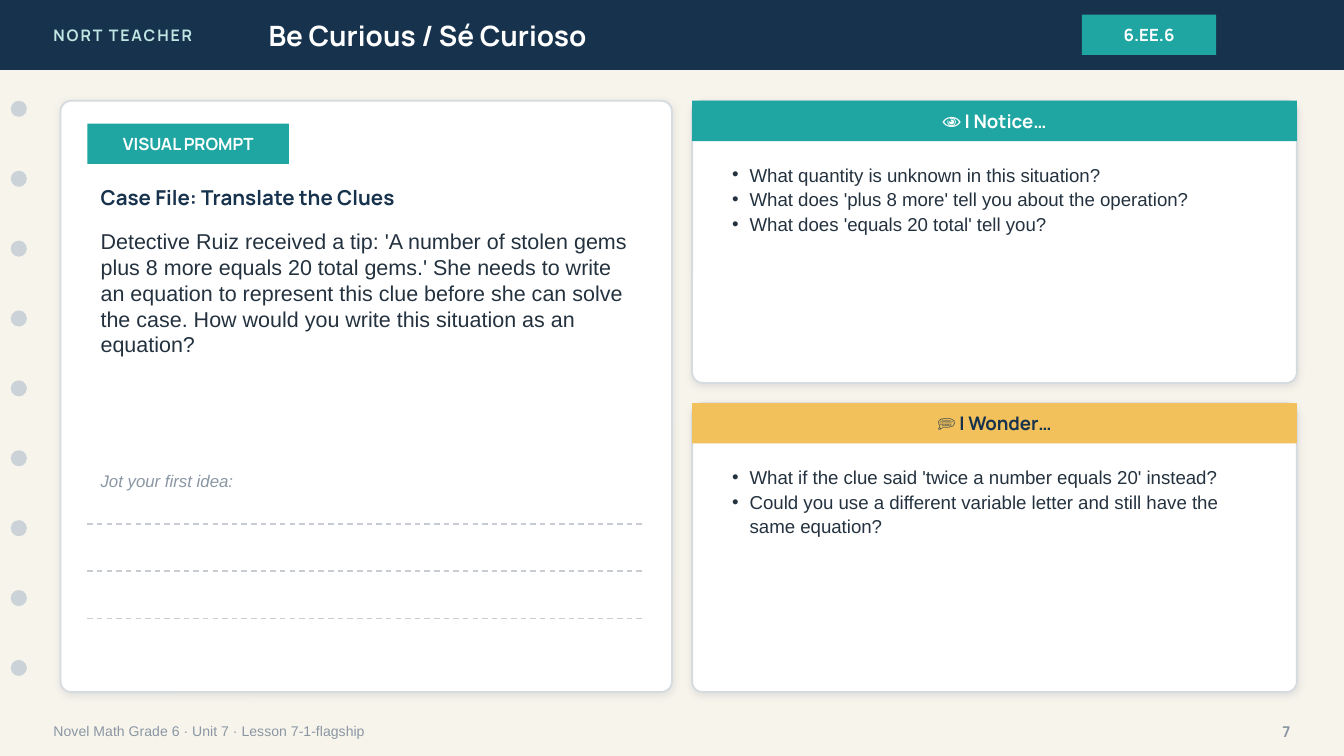
from lxml.etree import SubElement
from pptx import Presentation
from pptx.dml.color import RGBColor
from pptx.enum.dml import MSO_LINE
from pptx.enum.shapes import MSO_CONNECTOR, MSO_SHAPE
from pptx.enum.text import MSO_ANCHOR, PP_ALIGN
from pptx.oxml.ns import qn
from pptx.util import Inches, Pt

CREAM = RGBColor(0xF7, 0xF4, 0xEC)
NAVY = RGBColor(0x17, 0x32, 0x4D)
TEAL = RGBColor(0x1F, 0xA6, 0xA2)
MINT = RGBColor(0xBF, 0xE6, 0xE2)
GOLD = RGBColor(0xF2, 0xC1, 0x5B)
WHITE = RGBColor(0xFF, 0xFF, 0xFF)
INK = RGBColor(0x24, 0x32, 0x3F)
GREY = RGBColor(0x8A, 0x96, 0xA3)
HOLE = RGBColor(0xCB, 0xD3, 0xD9)
BORDER = RGBColor(0xD6, 0xDB, 0xDF)
RULE = RGBColor(0xC7, 0xCD, 0xD2)

HEADING = {"name": "Manrope", "bold": True}
BODY = {"name": "Arial"}
MIDDLE, TOP = MSO_ANCHOR.MIDDLE, MSO_ANCHOR.TOP
LEFT, CENTER, RIGHT = PP_ALIGN.LEFT, PP_ALIGN.CENTER, PP_ALIGN.RIGHT


def add_block(kind, bounds, fill):
    block = page.shapes.add_shape(kind, *map(Inches, bounds))
    block.shadow.inherit = False
    block.fill.solid()
    block.fill.fore_color.rgb = fill
    block.line.fill.background()
    return block


def write(box, lines, size, color, style, align=LEFT, anchor=MIDDLE, bullets=False):
    """Fill a shape with one paragraph per line and return the last run."""
    frame = box.text_frame
    frame.word_wrap = True
    frame.vertical_anchor = anchor
    for index, line in enumerate(lines):
        para = frame.add_paragraph() if index else frame.paragraphs[0]
        para.alignment = align
        if bullets:
            para.line_spacing = 1.1
            properties = para._p.get_or_add_pPr()
            properties.set("marL", str(Inches(0.13)))
            properties.set("indent", str(-Inches(0.13)))
            SubElement(properties, qn("a:buFont"), typeface="Arial")
            SubElement(properties, qn("a:buChar"), char="•")
        span = para.add_run()
        span.text = line
        span.font.size = Pt(size)
        span.font.color.rgb = color
        for key, value in style.items():
            setattr(span.font, key, value)
    return span


deck = Presentation()
deck.slide_width = Inches(10)
deck.slide_height = deck.slide_width * 9 // 16
page = deck.slides.add_slide(deck.slide_layouts[6])
page.background.fill.solid()
page.background.fill.fore_color.rgb = CREAM

# Header band and binder holes
add_block(MSO_SHAPE.RECTANGLE, (0, 0, 10, 0.52), NAVY)
for row in range(9):
    add_block(MSO_SHAPE.OVAL, (0.08, 0.75 + 0.52 * row, 0.12, 0.12), HOLE)

# Cards: bounds and corner rounding
cards = [
    ((0.45, 0.75, 4.55, 4.4), 0.018),
    ((5.15, 0.75, 4.5, 2.1), 0.038),
    ((5.15, 3, 4.5, 2.15), 0.037),
]
for bounds, rounding in cards:
    card = add_block(MSO_SHAPE.ROUNDED_RECTANGLE, bounds, WHITE)
    card.adjustments[0] = rounding
    card.line.color.rgb = BORDER
    card.line.width = Pt(1)
    effects = card._element.spPr.find(qn("a:effectLst"))
    shadow = SubElement(effects, qn("a:outerShdw"), blurRad=str(Pt(4)),
                        dist=str(Pt(1)), dir="5400000", rotWithShape="0")
    tint = SubElement(shadow, qn("a:srgbClr"), val="1C2E42")
    SubElement(tint, qn("a:alpha"), val="10000")

# Filled labels
labels = [
    ((8.05, 0.11, 1, 0.3), "6.EE.6", 9, TEAL, WHITE),
    ((0.65, 0.92, 1.5, 0.3), "VISUAL PROMPT", 9, TEAL, WHITE),
    ((5.15, 0.75, 4.5, 0.3), "👁 I Notice…", 10, TEAL, WHITE),
    ((5.15, 3, 4.5, 0.3), "💭 I Wonder…", 10, GOLD, NAVY),
]
for bounds, text, size, fill, color in labels:
    label = add_block(MSO_SHAPE.RECTANGLE, bounds, fill)
    write(label, [text], size, color, HEADING, CENTER)

# Single-paragraph texts
prompt = (
    "Detective Ruiz received a tip: 'A number of stolen gems plus 8 more "
    "equals 20 total gems.' She needs to write an equation to represent this "
    "clue before she can solve the case. How would you write this situation "
    "as an equation?"
)
texts = [
    ((1.9, 0, 5.6, 0.52), "Be Curious / Sé Curioso", 15, WHITE, HEADING, LEFT, MIDDLE),
    ((0.3, 5.3, 7, 0.28), "Novel Math Grade 6 · Unit 7 · Lesson 7-1-flagship",
     7.5, GREY, BODY, LEFT, MIDDLE),
    ((9.2, 5.3, 0.5, 0.28), "7", 8, GREY, HEADING, RIGHT, MIDDLE),
    ((0.65, 1.32, 4.15, 0.3), "Case File: Translate the Clues", 11, NAVY, HEADING,
     LEFT, MIDDLE),
    ((0.65, 1.65, 4.15, 1.7), prompt, 11.5, INK, BODY, LEFT, TOP),
    ((0.65, 3.45, 4, 0.25), "Jot your first idea:", 9, GREY, BODY | {"italic": True},
     LEFT, MIDDLE),
]
for bounds, text, *formatting in texts:
    write(page.shapes.add_textbox(*map(Inches, bounds)), [text], *formatting)

brand = page.shapes.add_textbox(Inches(0.3), 0, Inches(2.4), Inches(0.52))
span = write(brand, ["NORT TEACHER"], 8.5, MINT, HEADING)
span._r.get_or_add_rPr().set("spc", "100")

# Question lists
questions = [
    ((5.35, 1.15, 4.1, 1.6), [
        "What quantity is unknown in this situation?",
        "What does 'plus 8 more' tell you about the operation?",
        "What does 'equals 20 total' tell you?",
    ]),
    ((5.35, 3.4, 4.1, 1.65), [
        "What if the clue said 'twice a number equals 20' instead?",
        "Could you use a different variable letter and still have the same equation?",
    ]),
]
for bounds, lines in questions:
    box = page.shapes.add_textbox(*map(Inches, bounds))
    write(box, lines, 10, INK, BODY, anchor=TOP, bullets=True)

# Dashed writing lines
for row in range(3):
    y = Inches(3.9 + 0.35 * row)
    rule = page.shapes.add_connector(MSO_CONNECTOR.STRAIGHT, Inches(0.65), y, Inches(4.8), y)
    rule.line.color.rgb = RULE
    rule.line.width = Pt(0.75)
    rule.line.dash_style = MSO_LINE.DASH
    SubElement(rule._element.spPr, qn("a:effectLst"))

deck.save("out.pptx")
